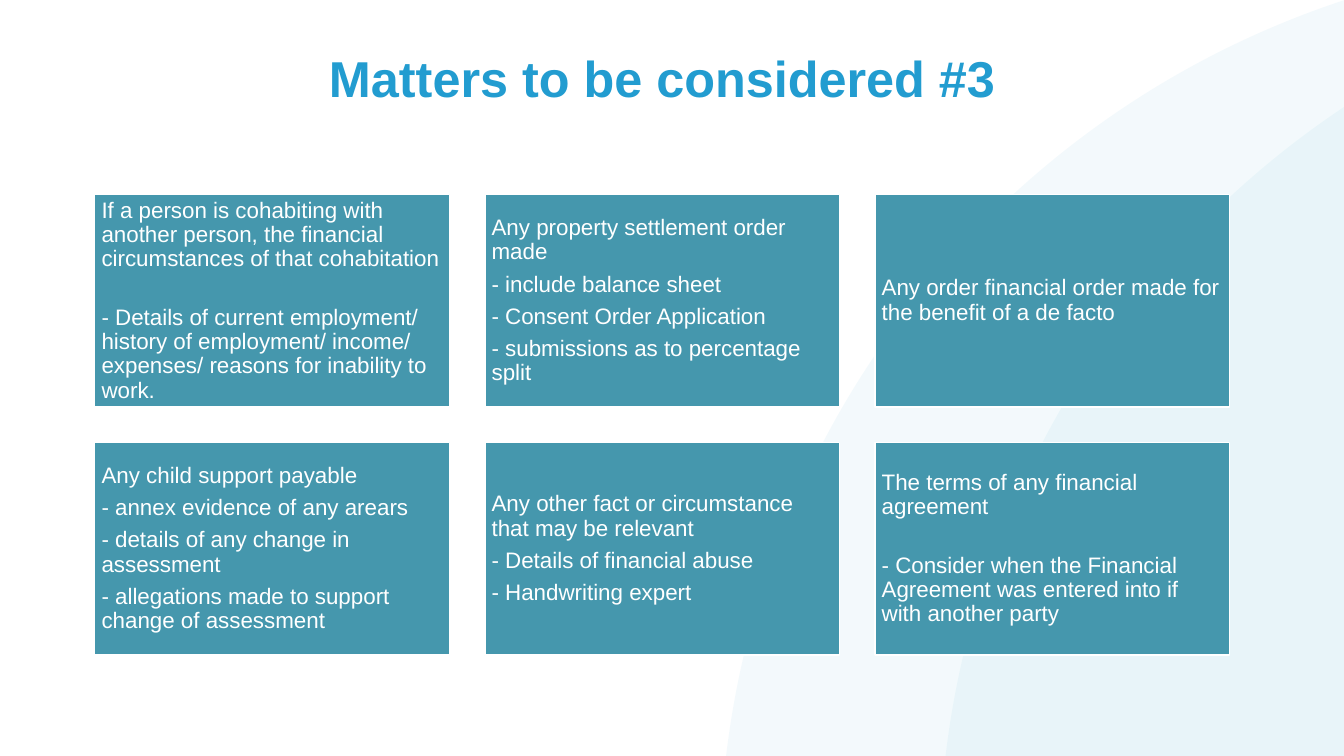
from lxml.etree import SubElement
from pptx import Presentation
from pptx.dml.color import RGBColor
from pptx.enum.shapes import MSO_SHAPE
from pptx.enum.text import MSO_ANCHOR, PP_ALIGN
from pptx.oxml.ns import qn
from pptx.util import Cm, Pt

BLUE, TEAL, WHITE = "229CD0", "4597AD", "FFFFFF"
DETAIL_GAP = 25  # points between a matter and its separate detail

MATTERS = [
    (["If a person is cohabiting with another person, the financial "
      "circumstances of that cohabitation",
      "- Details of current employment/ history of employment/ income/ "
      "expenses/ reasons for inability to work."], DETAIL_GAP),
    (["Any property settlement order made",
      "- include balance sheet",
      "- Consent Order Application",
      "- submissions as to percentage split"], None),
    (["Any order financial order made for the benefit of a de facto"], None),
    (["Any child support payable",
      "- annex evidence of any arears",
      "- details of any change in assessment",
      "- allegations made to support change of assessment"], None),
    (["Any other fact or circumstance that may be relevant",
      "- Details of financial abuse",
      "- Handwriting expert"], None),
    (["The terms of any financial agreement",
      "- Consider when the Financial Agreement was entered into if with "
      "another party"], DETAIL_GAP),
]


def rgb(code):
    return RGBColor.from_string(code)


def write(frame, lines, size=16, color=WHITE, bold=False, align=PP_ALIGN.LEFT,
          anchor=MSO_ANCHOR.MIDDLE, gap=5.6, first_gap=None):
    """Fill a text frame; first_gap replaces the gap after the first line."""
    frame.word_wrap = True
    frame.vertical_anchor = anchor
    for index, line in enumerate(lines):
        paragraph = frame.add_paragraph() if index else frame.paragraphs[0]
        paragraph.alignment = align
        paragraph.line_spacing = 0.9
        paragraph.space_before = Pt(0)
        paragraph.space_after = Pt(gap if index or first_gap is None else first_gap)
        run = paragraph.add_run()
        run.text = line
        font = run.font
        font.name, font.size, font.bold = "Arial", Pt(size), bold
        font.color.rgb = rgb(color)


class Deck:
    def __init__(self):
        self.presentation = Presentation()
        self.presentation.slide_width = Cm(33.87)
        self.presentation.slide_height = Cm(19.05)
        self.layout = self.presentation.slide_layouts[5]
        self.slide = self.presentation.slides.add_slide(self.layout)

    def shape(self, kind, left, top, width, height, fill):
        shape = self.slide.shapes.add_shape(
            kind, Cm(left), Cm(top), Cm(width), Cm(height))
        shape.shadow.inherit = False
        shape.fill.solid()
        shape.fill.fore_color.rgb = rgb(fill)
        return shape

    def backdrop_circle(self, left, top, diameter):
        """Place a pale circle on the layout, behind the slide content."""
        circle = self.shape(MSO_SHAPE.OVAL, left, top, diameter, diameter, BLUE)
        circle.line.fill.background()
        tint = circle.element.spPr.find(qn("a:solidFill"))[0]
        SubElement(tint, qn("a:alpha"), val="5000")
        self.layout.shapes.element.insert(2, circle.element)

    def title(self, text):
        title = self.slide.shapes.title
        title.left, title.top = Cm(2.39), Cm(1.24)
        title.width, title.height = Cm(28.6), Cm(2.46)
        write(title.text_frame, [text], size=36, color=BLUE, bold=True,
              align=PP_ALIGN.CENTER, anchor=MSO_ANCHOR.TOP, gap=0)

    def card(self, left, top, lines, first_gap):
        card = self.shape(MSO_SHAPE.RECTANGLE, left, top, 8.94, 5.36, TEAL)
        card.line.color.rgb = rgb(WHITE)
        card.line.width = Pt(1)
        frame = card.text_frame
        frame.margin_left = frame.margin_right = Cm(0.17)
        frame.margin_top = frame.margin_bottom = Cm(0.17)
        write(frame, lines, first_gap=first_gap)


def main():
    deck = Deck()
    for left in (18.14, 23.67):
        deck.backdrop_circle(left, -1.14, 45.77)
    deck.title("Matters to be considered #3")
    for index, (lines, first_gap) in enumerate(MATTERS):
        row, column = divmod(index, 3)
        deck.card(2.39 + column * 9.83, 4.9 + row * 6.25, lines, first_gap)
    deck.presentation.save("out.pptx")


if __name__ == "__main__":
    main()
